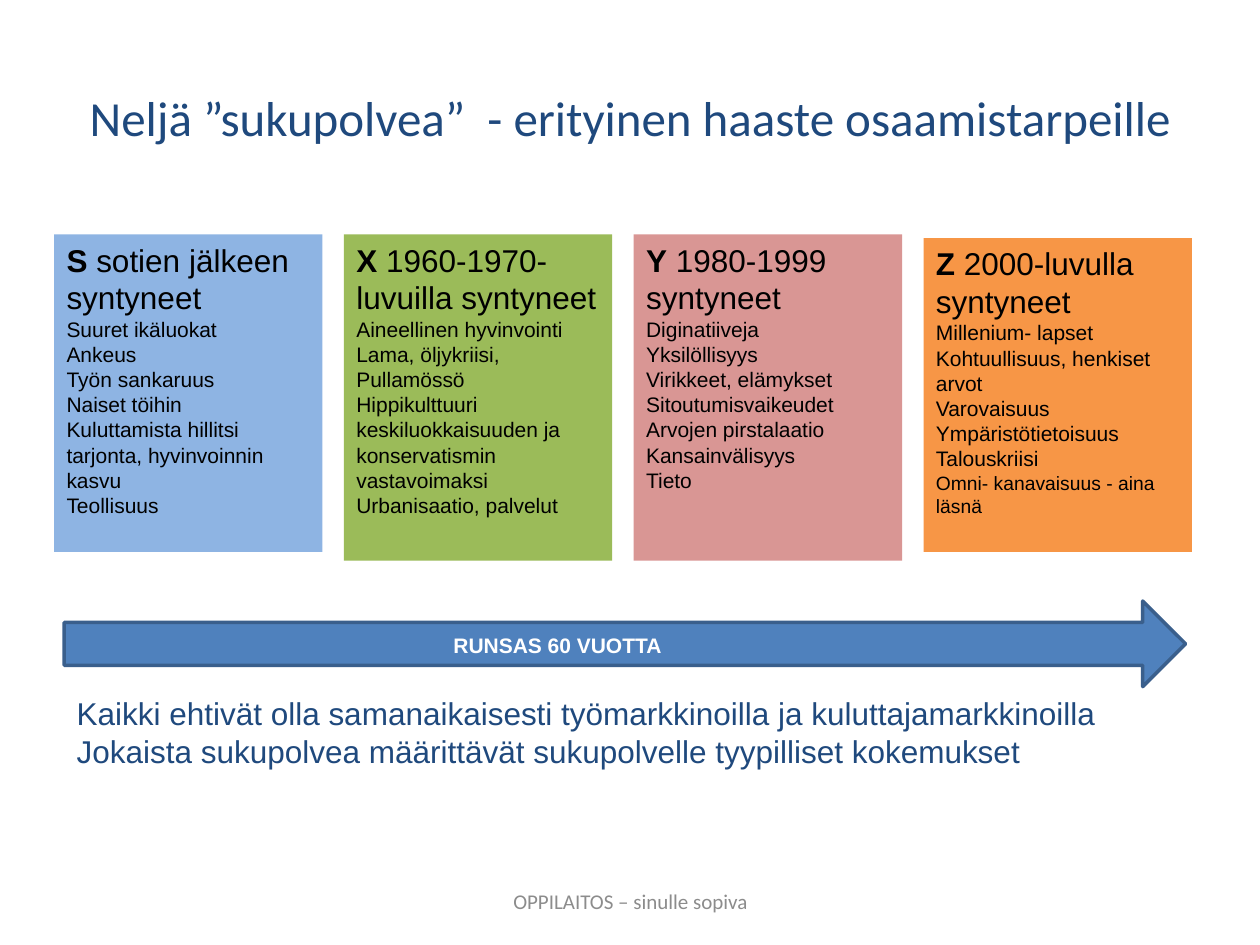
from dataclasses import dataclass
from typing import NamedTuple

from pptx import Presentation, util as u
from pptx.dml.color import RGBColor
from pptx.enum import shapes, text


@dataclass(frozen=True)
class Theme:
    heading_font: str = "Calibri"
    body_font: str = "Arial"
    navy: str = "1F497D"
    black: str = "000000"
    white: str = "FFFFFF"
    grey: str = "8C8C8C"
    arrow: str = "4F81BD"
    arrow_line: str = "3A5F8C"
    title: int = 28
    lead: int = 18
    detail: int = 12
    small: int = 11


class Area(NamedTuple):
    """Left, top, width and height in grid columns and rows."""
    left: float
    top: float
    width: float
    height: float


class Run(NamedTuple):
    words: str
    size: int
    color: str
    bold: bool = False
    font: str = "Arial"


@dataclass(frozen=True)
class Generation:
    letter: str
    birth: str
    traits: list[str]
    fill: str
    top: float
    height: float
    last_size: int = 12


THEME = Theme()
CELL = u.Inches(0.1)
COLUMNS, ROWS = 100, 75
FIRST_LEFT, PITCH, CARD_WIDTH = 4.3, 23, 21.3

GENERATIONS = [
    Generation("S", " sotien jälkeen syntyneet", [
        "Suuret ikäluokat", "Ankeus", "Työn sankaruus", "Naiset töihin",
        "Kuluttamista hillitsi tarjonta, hyvinvoinnin kasvu", "Teollisuus",
    ], "8EB4E3", 18.6, 25.2),
    Generation("X", " 1960-1970-luvuilla syntyneet", [
        "Aineellinen hyvinvointi", "Lama, öljykriisi,", "Pullamössö",
        "Hippikulttuuri keskiluokkaisuuden ja konservatismin vastavoimaksi",
        "Urbanisaatio, palvelut",
    ], "9BBB59", 18.6, 25.9),
    Generation("Y", " 1980-1999 syntyneet", [
        "Diginatiiveja", "Yksilöllisyys", "Virikkeet, elämykset",
        "Sitoutumisvaikeudet Arvojen pirstalaatio", "Kansainvälisyys", "Tieto",
    ], "D99694", 18.6, 25.9),
    Generation("Z", " 2000-luvulla syntyneet", [
        "Millenium- lapset", "Kohtuullisuus, henkiset arvot", "Varovaisuus",
        "Ympäristötietoisuus", "Talouskriisi", "Omni- kanavaisuus - aina läsnä",
    ], "F79646", 18.9, 24.9, THEME.small),
]


def emu(area: Area) -> list[int]:
    return [round(length * CELL) for length in area]


def write(shape, paragraphs: list[list[Run]], align=text.PP_ALIGN.LEFT,
          anchor=text.MSO_ANCHOR.TOP) -> None:
    frame = shape.text_frame
    frame.word_wrap = True
    frame.vertical_anchor = anchor
    for index, runs in enumerate(paragraphs):
        paragraph = frame.add_paragraph() if index else frame.paragraphs[0]
        paragraph.alignment = align
        for item in runs:
            run = paragraph.add_run()
            run.text = item.words
            run.font.name = item.font
            run.font.size = u.Pt(item.size)
            run.font.bold = item.bold
            run.font.color.rgb = RGBColor.from_string(item.color)


def add_text(slide, area: Area, paragraphs: list[list[Run]], **layout) -> None:
    write(slide.shapes.add_textbox(*emu(area)), paragraphs, **layout)


def add_filled(slide, kind, area: Area, fill: str):
    shape = slide.shapes.add_shape(kind, *emu(area))
    shape.shadow.inherit = False
    shape.fill.solid()
    shape.fill.fore_color.rgb = RGBColor.from_string(fill)
    shape.line.fill.background()
    return shape


def add_card(slide, column: int, generation: Generation) -> None:
    area = Area(FIRST_LEFT + column * PITCH, generation.top, CARD_WIDTH, generation.height)
    card = add_filled(slide, shapes.MSO_SHAPE.RECTANGLE, area, generation.fill)
    heading = [Run(generation.letter, THEME.lead, THEME.black, True),
               Run(generation.birth, THEME.lead, THEME.black)]
    *traits, last = generation.traits
    lines = [[Run(trait, THEME.detail, THEME.black)] for trait in traits]
    write(card, [heading, *lines, [Run(last, generation.last_size, THEME.black)]])


def add_time_arrow(slide) -> None:
    arrow = add_filled(slide, shapes.MSO_SHAPE.RIGHT_ARROW,
                       Area(5.1, 47.7, 89, 6.8), THEME.arrow)
    arrow.line.color.rgb = RGBColor.from_string(THEME.arrow_line)
    arrow.line.width = u.Pt(2)
    add_text(slide, Area(35, 49.7, 21.8, 3),
             [[Run("RUNSAS 60 VUOTTA", THEME.detail, THEME.white, True)]])


def main() -> None:
    presentation = Presentation()
    presentation.slide_width = COLUMNS * CELL
    presentation.slide_height = ROWS * CELL
    slide = presentation.slides.add_slide(presentation.slide_layouts[6])
    centred = {"align": text.PP_ALIGN.CENTER, "anchor": text.MSO_ANCHOR.MIDDLE}

    add_text(slide, Area(5, 3, 90, 12.5),
             [[Run("Neljä ”sukupolvea”  - erityinen haaste osaamistarpeille",
                   THEME.title, THEME.navy, font=THEME.heading_font)]], **centred)
    add_text(slide, Area(34.2, 69.5, 31.7, 4),
             [[Run("OPPILAITOS – sinulle sopiva", THEME.detail, THEME.grey,
                   font=THEME.heading_font)]], **centred)
    for column, generation in enumerate(GENERATIONS):
        add_card(slide, column, generation)
    conclusions = [
        "Kaikki ehtivät olla samanaikaisesti työmarkkinoilla ja kuluttajamarkkinoilla",
        "Jokaista sukupolvea määrittävät sukupolvelle tyypilliset kokemukset",
    ]
    add_text(slide, Area(5.1, 54.6, 89, 7.1),
             [[Run(line, THEME.lead, THEME.navy)] for line in conclusions])
    add_time_arrow(slide)
    presentation.save("out.pptx")


if __name__ == "__main__":
    main()
